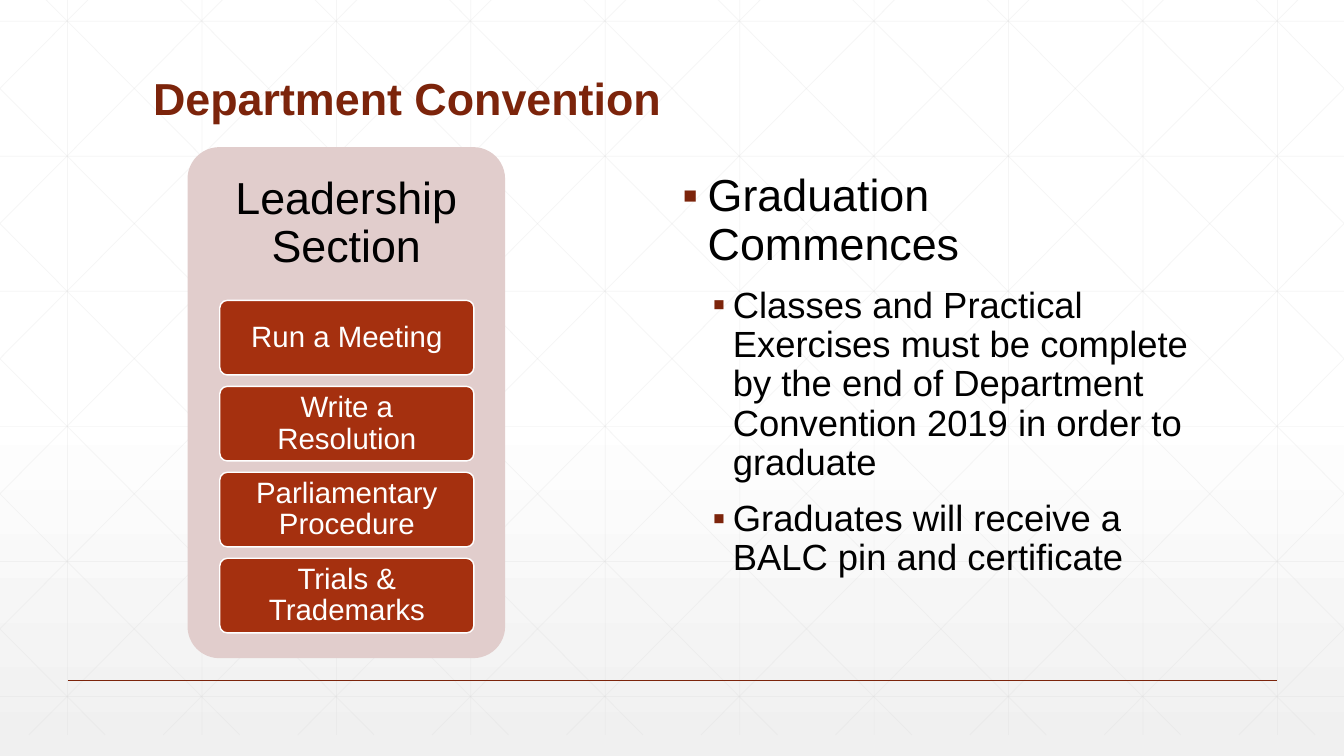
from lxml import etree
from pptx import Presentation
from pptx.dml.color import RGBColor
from pptx.enum import shapes, text
from pptx.oxml import ns
from pptx.util import Inches, Pt

WIDTH, HEIGHT = 13.33, 7.5
GRID_TOP, GRID_BOTTOM = -0.21, 7.29
STEP = 4 / 3
DIAGONAL_RUN = 7.46
DARK_RED = "7C240B"
SKILLS = ["Run a Meeting", "Write a Resolution", "Parliamentary Procedure", "Trials & Trademarks"]
GRADUATION = [
    ("Graduation Commences", 0, 32),
    ("Classes and Practical Exercises must be complete by the end of "
     "Department Convention 2019 in order to graduate", 1, 26),
    ("Graduates will receive a BALC pin and certificate", 1, 26),
]


def color(value):
    return RGBColor.from_string(value)


def add_node(parent, tag, **attributes):
    return etree.SubElement(parent, ns.qn(tag), attributes)


def add_line(page, start, end, line_color, points, opacity=None):
    ends = [Inches(value) for value in (*start, *end)]
    line = page.shapes.add_connector(shapes.MSO_CONNECTOR.STRAIGHT, *ends)
    line.line.color.rgb = color(line_color)
    line.line.width = Pt(points)
    if opacity is not None:
        fill = line.line.color._xFill
        add_node(fill[0], "a:alpha", val=str(opacity * 1000))
    add_node(line._element.spPr, "a:effectLst")


def add_grid(page):
    def grid_line(start, end):
        add_line(page, start, end, "D9D9D9", 0.5, 25)

    for column in range(10):
        x = 0.67 + column * STEP
        grid_line((x, GRID_TOP), (x, GRID_BOTTOM))
    for row in range(6):
        y = 0.21 + row * 1.34
        grid_line((0, y), (WIDTH, y))
    slope = (GRID_BOTTOM - GRID_TOP) / DIAGONAL_RUN
    for index in range(-5, 10):
        origin = 0.25 + index * STEP
        left, right = max(0, origin), min(WIDTH, origin + DIAGONAL_RUN)
        top, bottom = [GRID_TOP + (x - origin) * slope for x in (left, right)]
        grid_line((left, top), (right, bottom))
        grid_line((WIDTH - left, top), (WIDTH - right, bottom))


def set_frame(frame, anchor, side=0.1, edge=0.05):
    frame.word_wrap = True
    frame.vertical_anchor = anchor
    frame.margin_left = frame.margin_right = Inches(side)
    frame.margin_top = frame.margin_bottom = Inches(edge)


def style_paragraph(para, size, font_color, align, bold=False):
    para.alignment = align
    para.line_spacing = 0.9
    for span in para.runs:
        span.font.name = "Arial"
        span.font.size = Pt(size)
        span.font.bold = bold
        span.font.color.rgb = color(font_color)


def add_text(page, area, content, size, font_color, align, anchor, bold=False):
    box = page.shapes.add_textbox(*[Inches(value) for value in area])
    set_frame(box.text_frame, anchor)
    box.text_frame.text = content
    style_paragraph(box.text_frame.paragraphs[0], size, font_color, align, bold)


def add_rounded(page, area, fill, outline=None):
    box = page.shapes.add_shape(
        shapes.MSO_SHAPE.ROUNDED_RECTANGLE, *[Inches(value) for value in area])
    box.adjustments[0] = 0.1
    box.shadow.inherit = False
    box.fill.solid()
    box.fill.fore_color.rgb = color(fill)
    if outline:
        box.line.color.rgb = color(outline)
        box.line.width = Pt(1)
    else:
        box.line.fill.background()
    return box


def add_skill(page, top, label):
    box = add_rounded(page, (2.18, top, 2.52, 0.74), "A5300F", "FFFFFF")
    set_frame(box.text_frame, text.MSO_ANCHOR.MIDDLE, 0.06, 0.04)
    box.text_frame.text = label
    style_paragraph(box.text_frame.paragraphs[0], 21, "FFFFFF", text.PP_ALIGN.CENTER)


def add_bullet(para, left, hanging):
    properties = para._p.get_or_add_pPr()
    properties.set("marL", str(Inches(left)))
    properties.set("indent", str(-Inches(hanging)))
    bullet_color = add_node(properties, "a:buClr")
    add_node(bullet_color, "a:srgbClr", val=DARK_RED)
    add_node(properties, "a:buFont", typeface="Arial")
    add_node(properties, "a:buChar", char="▪")


def add_bullet_list(page, area, items):
    box = page.shapes.add_textbox(*[Inches(value) for value in area])
    set_frame(box.text_frame, text.MSO_ANCHOR.TOP)
    box.text_frame.text = "\n".join(item[0] for item in items)
    for para, (_, level, size) in zip(box.text_frame.paragraphs, items):
        para.level = level
        add_bullet(para, *((0.5, 0.2) if level else (0.25, 0.25)))
        style_paragraph(para, size, "000000", text.PP_ALIGN.LEFT)
        if level:
            para.space_before = Pt(12)


def set_background(page):
    fill = page.background.fill
    fill.gradient()
    fill.gradient_angle = 270
    for stop, position, value in zip(fill.gradient_stops, (0.53, 1), ("FFFFFF", "F0F0F0")):
        stop.position = position
        stop.color.rgb = color(value)


def main():
    deck = Presentation()
    deck.slide_width, deck.slide_height = Inches(WIDTH), Inches(HEIGHT)
    page = deck.slides.add_slide(deck.slide_layouts[6])
    set_background(page)
    add_grid(page)
    add_line(page, (0.67, 6.75), (12.67, 6.75), DARK_RED, 1)
    add_rounded(page, (1.86, 1.46, 3.15, 5.07), "E1CDCC")
    add_text(page, (1.86, 1.46, 3.15, 1.52), "Leadership Section", 32, "000000",
             text.PP_ALIGN.CENTER, text.MSO_ANCHOR.MIDDLE)
    for index, label in enumerate(SKILLS):
        add_skill(page, 2.98 + index * 0.853, label)
    add_text(page, (1.42, 0.55, 10.5, 0.74), "Department Convention", 32, DARK_RED,
             text.PP_ALIGN.LEFT, text.MSO_ANCHOR.BOTTOM, bold=True)
    add_bullet_list(page, (6.67, 1.67, 5.25, 4.17), GRADUATION)
    deck.save("out.pptx")


if __name__ == "__main__":
    main()
